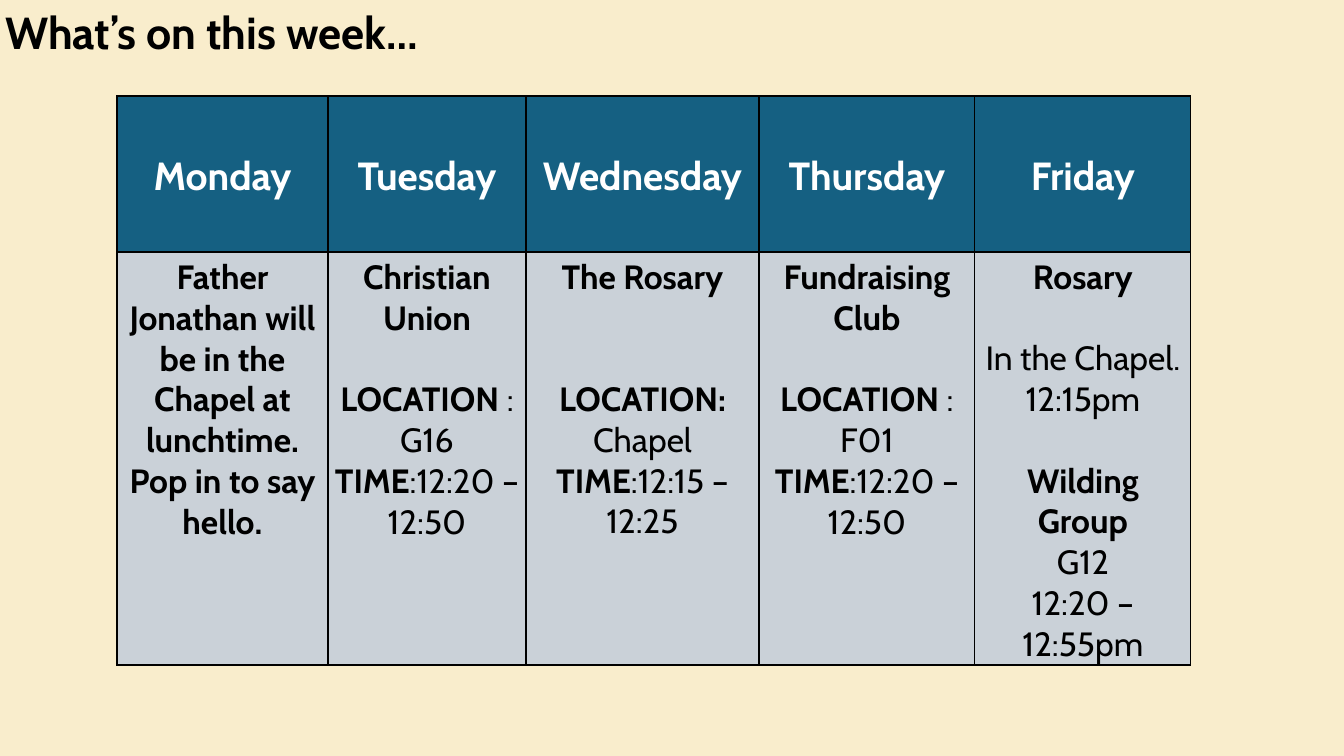
from dataclasses import dataclass

from lxml import etree
from pptx import Presentation
from pptx.dml.color import RGBColor
from pptx.enum.text import MSO_ANCHOR, MSO_AUTO_SIZE, PP_ALIGN
from pptx.oxml.ns import qn
from pptx.slide import Slide
from pptx.table import _Cell
from pptx.text.text import TextFrame
from pptx.util import Emu, Pt

PX_PER_INCH = 100.8
CREAM = RGBColor(0xF9, 0xED, 0xCC)
TEAL = RGBColor(0x15, 0x60, 0x82)
GREY = RGBColor(0xCA, 0xD1, 0xD8)
BLACK = RGBColor(0, 0, 0)
WHITE = RGBColor(0xFF, 0xFF, 0xFF)
LEFT, CENTER = PP_ALIGN.LEFT, PP_ALIGN.CENTER
TOP, MIDDLE = MSO_ANCHOR.TOP, MSO_ANCHOR.MIDDLE
NO_AUTOFIT = MSO_AUTO_SIZE.NONE
FONT = "Cabin"
INSET = 5
LINE_HEIGHT = 29  # points, one line of 24 pt text
ROW_HEIGHTS = (156, 413)


@dataclass(frozen=True)
class Line:
    """One paragraph: a bold part, a plain part, and blank lines above."""
    bold: str = ""
    plain: str = ""
    gap: int = 0


@dataclass(frozen=True)
class Day:
    name: str
    width: int
    lines: tuple[Line, ...]


@dataclass(frozen=True)
class Style:
    size: int
    color: RGBColor
    align: PP_ALIGN = CENTER


TITLE = Style(32, BLACK, LEFT)
HEADER = Style(28, WHITE)
BODY = Style(24, BLACK)

DAYS = (
    Day("Monday", 211, (
        Line("Father Jonathan will be in the Chapel at lunchtime. Pop in to say hello."),
    )),
    Day("Tuesday", 198, (
        Line("Christian Union"),
        Line("LOCATION", " : G16", gap=1),
        Line("TIME", ":12:20 – 12:50"),
    )),
    Day("Wednesday", 233, (
        Line("The Rosary"),
        Line("LOCATION: ", "Chapel", gap=2),
        Line("TIME", ":12:15 – 12:25"),
    )),
    Day("Thursday", 216, (
        Line("Fundraising Club"),
        Line("LOCATION", " : F01", gap=1),
        Line("TIME", ":12:20 – 12:50"),
    )),
    Day("Friday", 216, (
        Line("Rosary"),
        Line(plain="In the Chapel.", gap=1),
        Line(plain="12:15pm"),
        Line("Wilding Group", gap=1),
        Line(plain="G12"),
        Line(plain="12:20 – 12:55pm"),
    )),
)


def px(length: int) -> Emu:
    return Emu(round(length * 914400 / PX_PER_INCH))


def write_lines(frame: TextFrame, lines: tuple[Line, ...], style: Style) -> None:
    for index, line in enumerate(lines):
        para = frame.paragraphs[0] if index == 0 else frame.add_paragraph()
        para.alignment = style.align
        para.space_before = Pt(line.gap * LINE_HEIGHT)
        for text, bold in ((line.bold, True), (line.plain, False)):
            if not text:
                continue
            span = para.add_run()
            span.text = text
            span.font.color.rgb = style.color
            for name, value in {"name": FONT, "size": Pt(style.size), "bold": bold}.items():
                setattr(span.font, name, value)


def add_borders(cell: _Cell) -> None:
    properties = cell._tc.get_or_add_tcPr()
    for side in ("lnL", "lnR", "lnT", "lnB"):
        border = etree.SubElement(properties, qn(f"a:{side}"), w=str(Pt(1)))
        fill = etree.SubElement(border, qn("a:solidFill"))
        etree.SubElement(fill, qn("a:srgbClr"), val=str(BLACK))


def fill_cell(cell: _Cell, lines: tuple[Line, ...], style: Style,
              color: RGBColor, anchor: MSO_ANCHOR) -> None:
    add_borders(cell)
    cell.fill.solid()
    cell.fill.fore_color.rgb = color
    layout = {"margin_left": px(INSET), "margin_right": px(INSET),
              "margin_top": px(INSET), "margin_bottom": 0, "vertical_anchor": anchor}
    for name, value in layout.items():
        setattr(cell, name, value)
    write_lines(cell.text_frame, lines, style)


def add_title(page: Slide) -> None:
    title = page.shapes.title
    place = {"left": px(0), "top": px(0), "width": px(619), "height": px(64)}
    for name, value in place.items():
        setattr(title, name, value)
    frame = title.text_frame
    layout = {"margin_left": px(INSET), "margin_right": px(INSET),
              "margin_top": px(INSET), "margin_bottom": px(INSET),
              "vertical_anchor": TOP, "word_wrap": True, "auto_size": NO_AUTOFIT}
    for name, value in layout.items():
        setattr(frame, name, value)
    write_lines(frame, (Line("What’s on this week…"),), TITLE)


def add_timetable(page: Slide) -> None:
    width = sum(day.width for day in DAYS)
    table = page.shapes.add_table(len(ROW_HEIGHTS), len(DAYS), px(117), px(96),
                                  px(width), px(sum(ROW_HEIGHTS))).table
    table.horz_banding = False
    for row, height in zip(table.rows, ROW_HEIGHTS):
        row.height = px(height)
    for index, day in enumerate(DAYS):
        table.columns[index].width = px(day.width)
        fill_cell(table.cell(0, index), (Line(day.name),), HEADER, TEAL, MIDDLE)
        fill_cell(table.cell(1, index), day.lines, BODY, GREY, TOP)


def main() -> None:
    deck = Presentation()
    deck.slide_width, deck.slide_height = px(1344), px(756)
    page = deck.slides.add_slide(deck.slide_layouts.get_by_name("Title Only"))
    page.background.fill.solid()
    page.background.fill.fore_color.rgb = CREAM
    add_title(page)
    add_timetable(page)
    deck.save("out.pptx")


if __name__ == "__main__":
    main()
